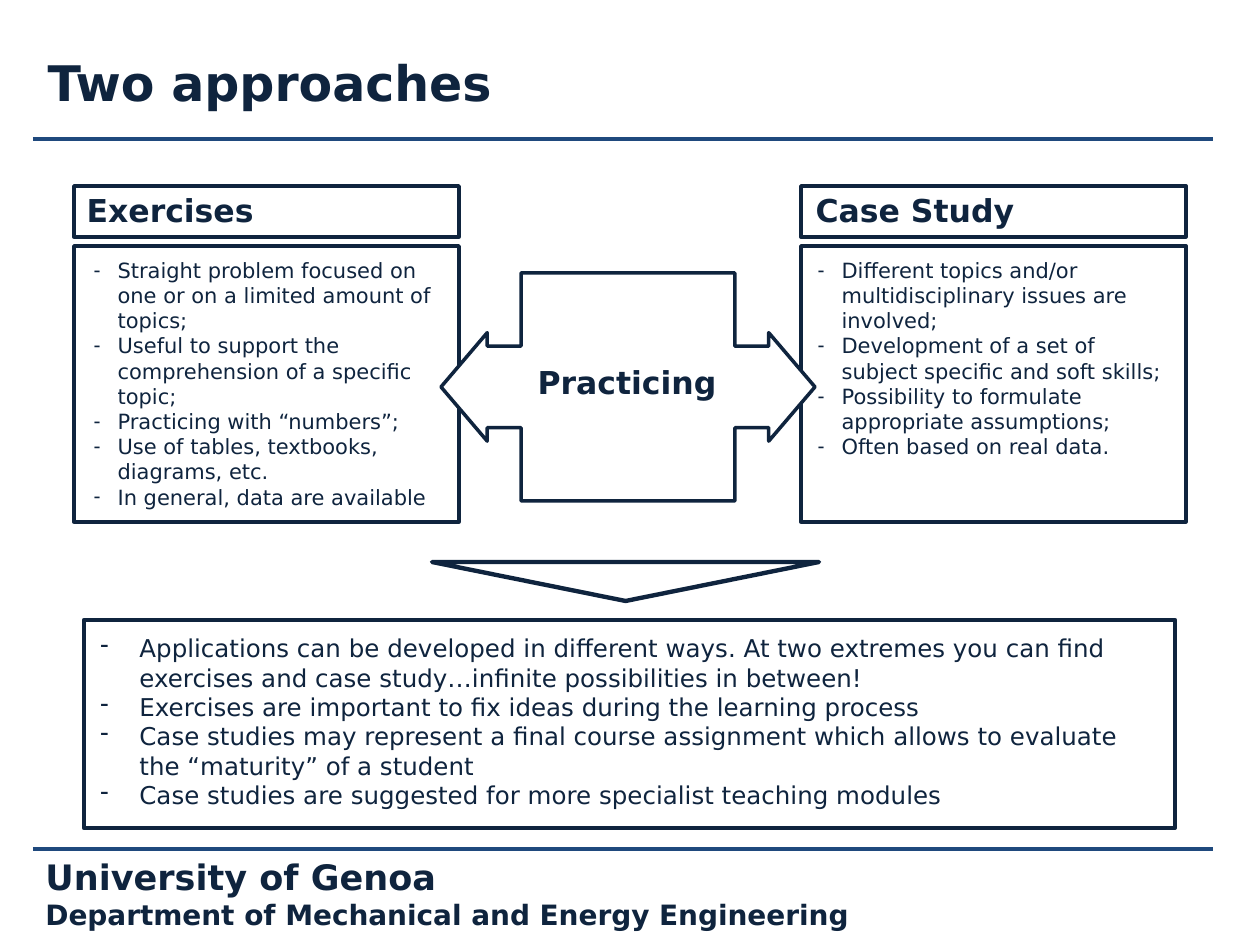
from dataclasses import dataclass
from lxml import etree
from pptx import Presentation
from pptx import util as u
from pptx.dml import color
from pptx.enum import shapes, text
from pptx.oxml import ns


@dataclass(frozen=True)
class Theme:
    ink: str = "0F243E"
    rule: str = "1F497D"
    paper: str = "FFFFFF"
    face: str = "DejaVu Sans"
    title: int = 28
    name: int = 20
    head: int = 18
    dept: int = 16
    note: int = 14
    item: int = 12


THEME = Theme()
SCALE = 914400 / 126
KIND = shapes.MSO_SHAPE
TOP = text.MSO_ANCHOR.TOP
MID = text.MSO_ANCHOR.MIDDLE
LEFT = text.PP_ALIGN.LEFT
MAIN = ["Two approaches"]
UNIT = ["University of Genoa", "Department of Mechanical and Energy Engineering"]
SIDES = [
    (74, 74, 81, "Exercises", [
        "Straight problem focused on one or on a limited amount of topics;",
        "Useful to support the comprehension of a specific topic;",
        "Practicing with “numbers”;",
        "Use of tables, textbooks, diagrams, etc.",
        "In general, data are available",
    ]),
    (801, 803, 805, "Case Study", [
        "Different topics and/or multidisciplinary issues are involved;",
        "Development of a set of subject specific and soft skills;",
        "Possibility to formulate appropriate assumptions;",
        "Often based on real data.",
    ]),
]
NOTES = [
    "Applications can be developed in different ways. At two extremes you can find "
    "exercises and case study…infinite possibilities in between!",
    "Exercises are important to fix ideas during the learning process",
    "Case studies may represent a final course assignment which allows to evaluate "
    "the “maturity” of a student",
    "Case studies are suggested for more specialist teaching modules",
]


def px(num):
    return u.Emu(round(num * SCALE))


def put(item, vals):
    for key, val in vals.items():
        setattr(item, key, val)


def rgb(code):
    return color.RGBColor.from_string(code)


def move(shape, box):
    put(shape, dict(zip(("left", "top", "width", "height"), map(px, box))))


def dash(para, gap):
    props = para._p.get_or_add_pPr()
    props.set("marL", str(px(gap)))
    props.set("indent", str(-px(gap)))
    etree.SubElement(props, ns.qn("a:buChar")).set("char", "-")


def write(shape, lines, sizes, bold=False, gap=0, align=LEFT, anchor=TOP):
    frame = shape.text_frame
    put(frame, {"word_wrap": True, "auto_size": text.MSO_AUTO_SIZE.NONE,
                "vertical_anchor": anchor})
    for num, line in enumerate(lines):
        para = frame.add_paragraph() if num else frame.paragraphs[0]
        put(para, {"alignment": align, "space_before": u.Pt(0), "line_spacing": 1.0})
        if gap:
            dash(para, gap)
        run = para.add_run()
        run.text = line
        put(run.font, {"name": THEME.face, "size": u.Pt(sizes[num % len(sizes)]),
                       "bold": bold})
        run.font.color.rgb = rgb(THEME.ink)


def label(slide, box, lines, sizes, **form):
    write(slide.shapes.add_textbox(*map(px, box)), lines, sizes, **form)


def fill(hold, box, lines, sizes, **form):
    move(hold, box)
    write(hold, lines, sizes, **form)


def frame(slide, kind, box, width=2, paint=None):
    shape = slide.shapes.add_shape(kind, *map(px, box))
    shape.shadow.inherit = False
    if paint:
        shape.fill.solid()
        shape.fill.fore_color.rgb = rgb(paint)
    else:
        shape.fill.background()
    shape.line.color.rgb = rgb(THEME.ink)
    shape.line.width = u.Pt(width)
    return shape


def rule(slide, top):
    line = slide.shapes.add_connector(
        shapes.MSO_CONNECTOR.STRAIGHT, px(33), px(top), px(1213), px(top))
    line.line.color.rgb = rgb(THEME.rule)
    line.line.width = u.Pt(2)
    etree.SubElement(line._element.spPr, ns.qn("a:effectLst"))


def side(slide, spot, left, head, body, title, items):
    holds = slide.placeholders
    frame(slide, KIND.RECTANGLE, (left, 186, 385, 51))
    frame(slide, KIND.RECTANGLE, (left, 246, 385, 276))
    fill(holds[spot], (head, 185, 348, 50), [title], [THEME.head], bold=True)
    fill(holds[spot + 1], (body, 251, 370, 267), items, [THEME.item], gap=24)


def center(slide):
    arrow = frame(slide, KIND.LEFT_RIGHT_ARROW_CALLOUT, (441, 273, 374, 228),
                  paint=THEME.paper)
    for num, val in enumerate((0.357, 0.238, 0.203, 0.572)):
        arrow.adjustments[num] = val
    label(slide, (509, 357, 236, 50), ["Practicing"], [THEME.head], bold=True,
          align=text.PP_ALIGN.CENTER)


def bottom(slide):
    wedge = frame(slide, KIND.ISOSCELES_TRIANGLE, (432, 562, 387, 39), 2.5)
    wedge.rotation = 180
    frame(slide, KIND.RECTANGLE, (84, 620, 1091, 208), 2.5)
    label(slide, (88, 627, 1080, 190), NOTES, [THEME.note], gap=39)


def main():
    deck = Presentation()
    put(deck, {"slide_width": px(1260), "slide_height": px(945)})
    slide = deck.slides.add_slide(deck.slide_layouts[4])
    for top in (139, 849):
        rule(slide, top)
    label(slide, (33, 862, 835, 63), UNIT, [THEME.name, THEME.dept], bold=True,
          anchor=MID)
    fill(slide.shapes.title, (35, 37, 1178, 89), MAIN, [THEME.title], bold=True,
         anchor=MID)
    for num, part in enumerate(SIDES):
        side(slide, 1 + 2 * num, *part)
    center(slide)
    bottom(slide)
    deck.save("out.pptx")


if __name__ == "__main__":
    main()
